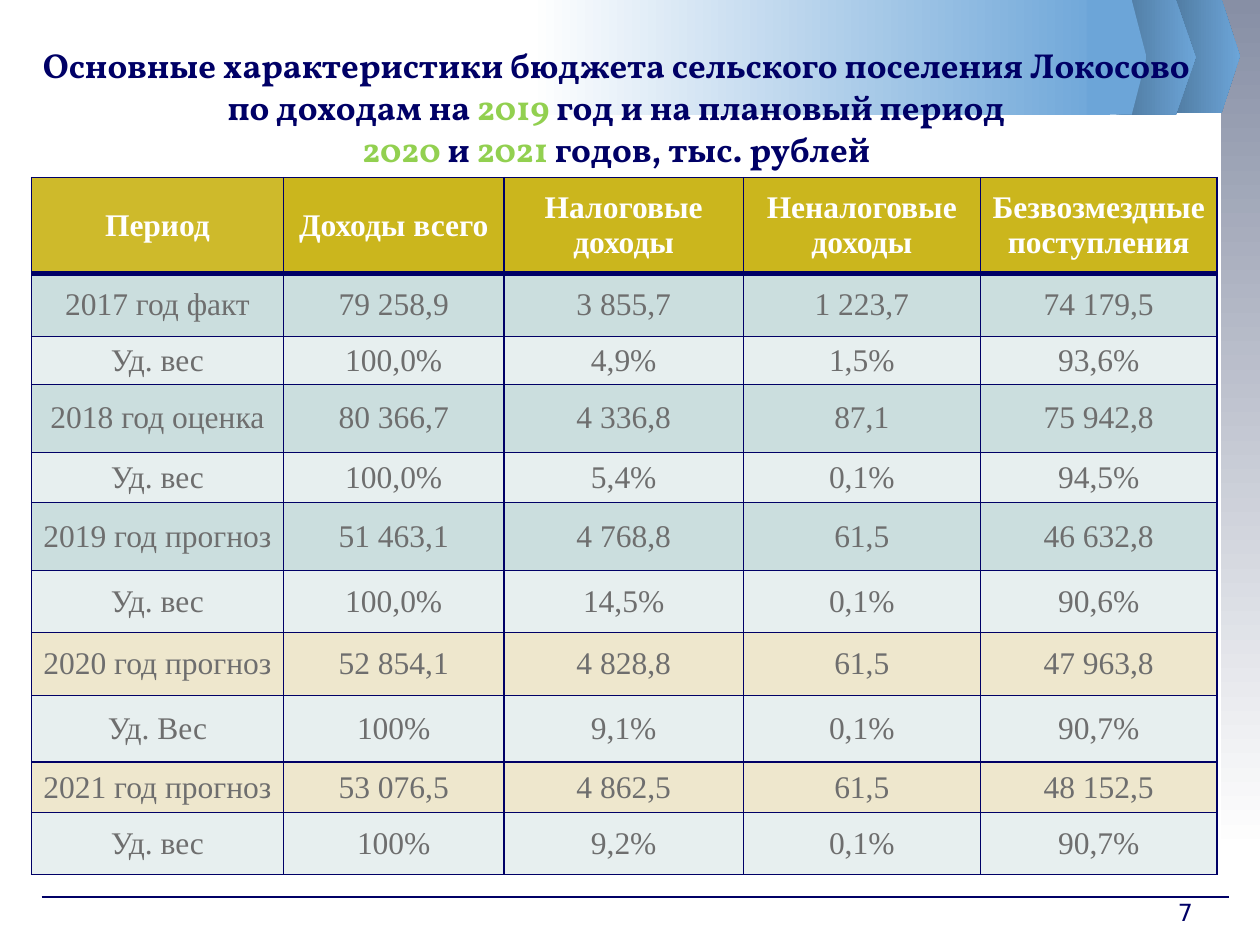
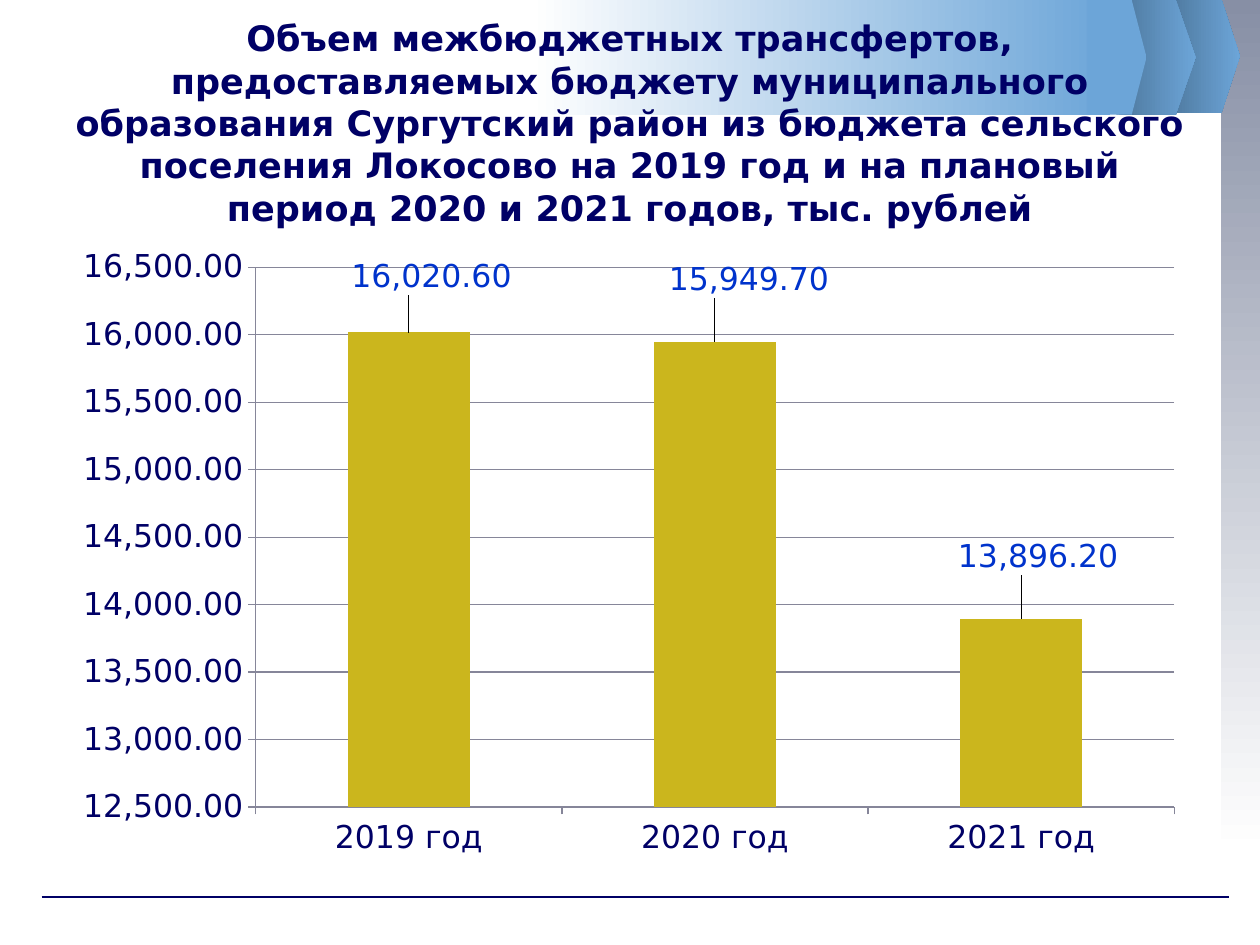
import pptx
import pptx.chart.data
import pptx.dml.color
import pptx.enum.chart
import pptx.enum.shapes
import pptx.enum.text
import pptx.oxml
import pptx.oxml.ns
import pptx.util

Inches, Pt = pptx.util.Inches, pptx.util.Pt
Shape = pptx.enum.shapes.MSO_SHAPE
Anchor = pptx.enum.text.MSO_ANCHOR
Align = pptx.enum.text.PP_ALIGN
NS = pptx.oxml.ns.nsdecls("a", "c")

NAVY, GOLD, BLUE, STEEL = "000066", "CBB61D", "6CA5D8", "4D769B"
WHITE, GREEN, GREY, GRID = "FFFFFF", "92D050", "6E6E6E", "868699"
MINT, PALE, SAND = "CBDEDE", "E7EFEF", "EEE7CD"
SANS, SERIF, HEAD = "DejaVu Sans", "Times New Roman", "Vollkorn"

COLS = [2, 1.75, 1.9, 1.88, 1.88]
ROWS = [
    (0.76, GOLD, ["Период", "Доходы всего", "Налоговые доходы", "Неналоговые доходы", "Безвозмездные поступления"]),
    (0.5, MINT, ["2017 год факт", "79 258,9", "3 855,7", "1 223,7", "74 179,5"]),
    (0.38, PALE, ["Уд. вес", "100,0%", "4,9%", "1,5%", "93,6%"]),
    (0.54, MINT, ["2018 год оценка", "80 366,7", "4 336,8", "87,1", "75 942,8"]),
    (0.4, PALE, ["Уд. вес", "100,0%", "5,4%", "0,1%", "94,5%"]),
    (0.54, MINT, ["2019 год прогноз", "51 463,1", "4 768,8", "61,5", "46 632,8"]),
    (0.49, PALE, ["Уд. вес", "100,0%", "14,5%", "0,1%", "90,6%"]),
    (0.5, SAND, ["2020 год прогноз", "52 854,1", "4 828,8", "61,5", "47 963,8"]),
    (0.53, PALE, ["Уд. Вес", "100%", "9,1%", "0,1%", "90,7%"]),
    (0.4, SAND, ["2021 год прогноз", "53 076,5", "4 862,5", "61,5", "48 152,5"]),
    (0.49, PALE, ["Уд. вес", "100%", "9,2%", "0,1%", "90,7%"]),
]
BARS = [
    ("2019 год", 16020.6, 0.02, -0.05),
    ("2020 год", 15949.7, 0.03, -0.06),
    ("2021 год", 13896.2, 0.015, -0.06),
]


def color(code):
    return pptx.dml.color.RGBColor.from_string(code)


def xml(text):
    return pptx.oxml.parse_xml(text)


def style(font, size=18, face=SANS, tint=NAVY, bold=False):
    font.size, font.name, font.bold = Pt(size), face, bold
    font.color.rgb = color(tint)


def shade(run):
    fill = run.font._element.find(pptx.oxml.ns.qn("a:solidFill"))
    fill.addnext(xml(
        f'<a:effectLst {NS}><a:outerShdw blurRad="38100" dist="38100" dir="2700000">'
        '<a:srgbClr val="000000"><a:alpha val="43000"/></a:srgbClr></a:outerShdw></a:effectLst>'))


def write(frame, text, tint=NAVY, align=Align.CENTER, space=None, glow=False, **form):
    parts = [(text, tint)] if isinstance(text, str) else text
    frame.word_wrap = True
    para = frame.paragraphs[0]
    para.alignment = align
    if space:
        para.line_spacing = Pt(space)
    for words, hue in parts:
        if words == "\n":
            para.add_line_break()
            continue
        run = para.add_run()
        run.text = words
        style(run.font, tint=hue, **form)
        if glow:
            shade(run)


def label(slide, box, text, anchor=Anchor.MIDDLE, **form):
    frame = slide.shapes.add_textbox(*map(Inches, box)).text_frame
    frame.vertical_anchor = anchor
    write(frame, text, **form)


def block(slide, kind, box, start, end, angle=0):
    shape = slide.shapes.add_shape(kind, *map(Inches, box))
    shape.shadow.inherit = False
    shape.line.fill.background()
    if kind == Shape.PENTAGON:
        shape.adjustments[0] = 0.25
    shape.fill.gradient()
    shape.fill.gradient_angle = angle
    for stop, code in zip(shape.fill.gradient_stops, (start, end)):
        stop.color.rgb = color(code)


def frame(slide):
    block(slide, Shape.RECTANGLE, (9.69, 0, 0.31, 6.77), "878FA5", WHITE, 270)
    rule = slide.shapes.add_connector(
        pptx.enum.shapes.MSO_CONNECTOR.STRAIGHT, *map(Inches, (0.33, 7.12, 9.75, 7.12)))
    rule.line.color.rgb, rule.line.width = color(NAVY), Pt(0.75)
    rule._element.spPr.append(xml(f"<a:effectLst {NS}/>"))
    block(slide, Shape.PENTAGON, (9.25, -0.01, 0.59, 0.91), STEEL, BLUE)
    block(slide, Shape.PENTAGON, (8.86, 0, 0.63, 0.91), STEEL, BLUE)
    block(slide, Shape.RECTANGLE, (4.21, 0, 4.6, 0.91), WHITE, BLUE)
    block(slide, Shape.PENTAGON, (8.63, 0, 0.47, 0.91), BLUE, BLUE)


def border(cell, top, base):
    props = cell._tc.get_or_add_tcPr()
    for side, width in zip("LRTB", (1, 1, top, base)):
        props.append(xml(
            f'<a:ln{side} {NS} w="{Pt(width)}"><a:solidFill>'
            f'<a:srgbClr val="{NAVY}"/></a:solidFill></a:ln{side}>'))


def grid(slide, box):
    table = slide.shapes.add_table(len(ROWS), len(COLS), *map(Inches, box)).table
    table.first_row = table.horz_banding = False
    for col, width in zip(table.columns, COLS):
        col.width = Inches(width)
    for row, (high, fill, texts) in enumerate(ROWS):
        table.rows[row].height = Inches(high)
        for col, text in enumerate(texts):
            cell = table.cell(row, col)
            border(cell, 3 if row == 1 else 1, 3 if row == 0 else 1)
            cell.fill.solid()
            cell.fill.fore_color.rgb = color("CEBA2B" if row == col == 0 else fill)
            cell.vertical_anchor = Anchor.MIDDLE
            cell.margin_left = cell.margin_right = Inches(0.07)
            cell.margin_top = cell.margin_bottom = 0
            write(cell.text_frame, text, face=SERIF, bold=row == 0,
                  tint=GREY if row else WHITE)


def place(x, y, size="", mode=""):
    return xml(
        f'<c:layout {NS}><c:manualLayout>{mode}<c:x val="{x}"/><c:y val="{y}"/>{size}'
        "</c:manualLayout></c:layout>")


def tag(series, spot, x, y):
    note = series.points[spot].data_label
    style(note.font, tint="0033CC")
    note.position = pptx.enum.chart.XL_LABEL_POSITION.OUTSIDE_END
    node = series._element.xpath(f"c:dLbls/c:dLbl[c:idx/@val='{spot}']")[0]
    node.insert(1, place(x, y))
    node.insert(2, xml(f'<c:numFmt {NS} formatCode="#,##0.00" sourceLinked="0"/>'))


def graph(slide, box):
    data = pptx.chart.data.CategoryChartData(number_format="#,##0.00")
    data.categories = [bar[0] for bar in BARS]
    data.add_series("Series 1", [bar[1] for bar in BARS])
    kind = pptx.enum.chart.XL_CHART_TYPE.COLUMN_CLUSTERED
    chart = slide.shapes.add_chart(kind, *map(Inches, box), data).chart
    chart.has_legend = chart.has_title = False
    style(chart.font)
    plot = chart.plots[0]
    plot.vary_by_categories, plot.gap_width = False, 150
    series = plot.series[0]
    series.format.fill.solid()
    series.format.fill.fore_color.rgb = color(GOLD)
    for spot, (_, _, x, y) in enumerate(BARS):
        tag(series, spot, x, y)
    value = chart.value_axis
    value.minimum_scale, value.maximum_scale, value.major_unit = 12500, 16500, 500
    value.tick_labels.number_format = "#,##0.00"
    value.tick_labels.number_format_is_linked = False
    value.has_major_gridlines = True
    for part in (value, chart.category_axis, value.major_gridlines):
        part.format.line.color.rgb = color(GRID)
        part.format.line.width = Pt(0.75)
    for axis in (value, chart.category_axis):
        axis.major_tick_mark = pptx.enum.chart.XL_TICK_MARK.OUTSIDE
    area = chart._chartSpace.chart.plotArea
    for old in area.xpath("c:layout"):
        area.remove(old)
    area.insert(0, place(
        0.17, 0.05, '<c:w val="0.81"/><c:h val="0.85"/>',
        '<c:layoutTarget val="inner"/><c:xMode val="edge"/><c:yMode val="edge"/>'))


def budget(slide):
    frame(slide)
    title = [
        ("Основные характеристики бюджета сельского поселения Локосово по доходам на ", NAVY),
        ("2019 ", GREEN), ("год и на плановый период", NAVY), ("\n", NAVY),
        ("2020", GREEN), (" и ", NAVY), ("2021", GREEN), (" годов, тыс. рублей", NAVY),
    ]
    label(slide, (0.17, 0.22, 9.44, 1.25), title,
          size=19.8, face=HEAD, bold=True, space=24, glow=True)
    grid(slide, (0.25, 1.41, 9.42, 5.55))
    label(slide, (9.25, 7.08, 0.42, 0.42), "7", Anchor.TOP, size=13.5, align=Align.LEFT)


def funds(slide):
    frame(slide)
    label(slide, (0.5, 0.23, 9, 1.48),
          "Объем межбюджетных трансфертов, предоставляемых бюджету муниципального "
          "образования Сургутский район из бюджета сельского поселения Локосово на 2019 год "
          "и на плановый период 2020 и 2021 годов, тыс. рублей",
          size=20, bold=True, space=24.2)
    graph(slide, (0.5, 1.87, 9, 5.04))


def main():
    deck = pptx.Presentation()
    deck.slide_width, deck.slide_height = Inches(10), Inches(7.5)
    for build in (budget, funds):
        build(deck.slides.add_slide(deck.slide_layouts[6]))
    deck.save("out.pptx")


if __name__ == "__main__":
    main()
